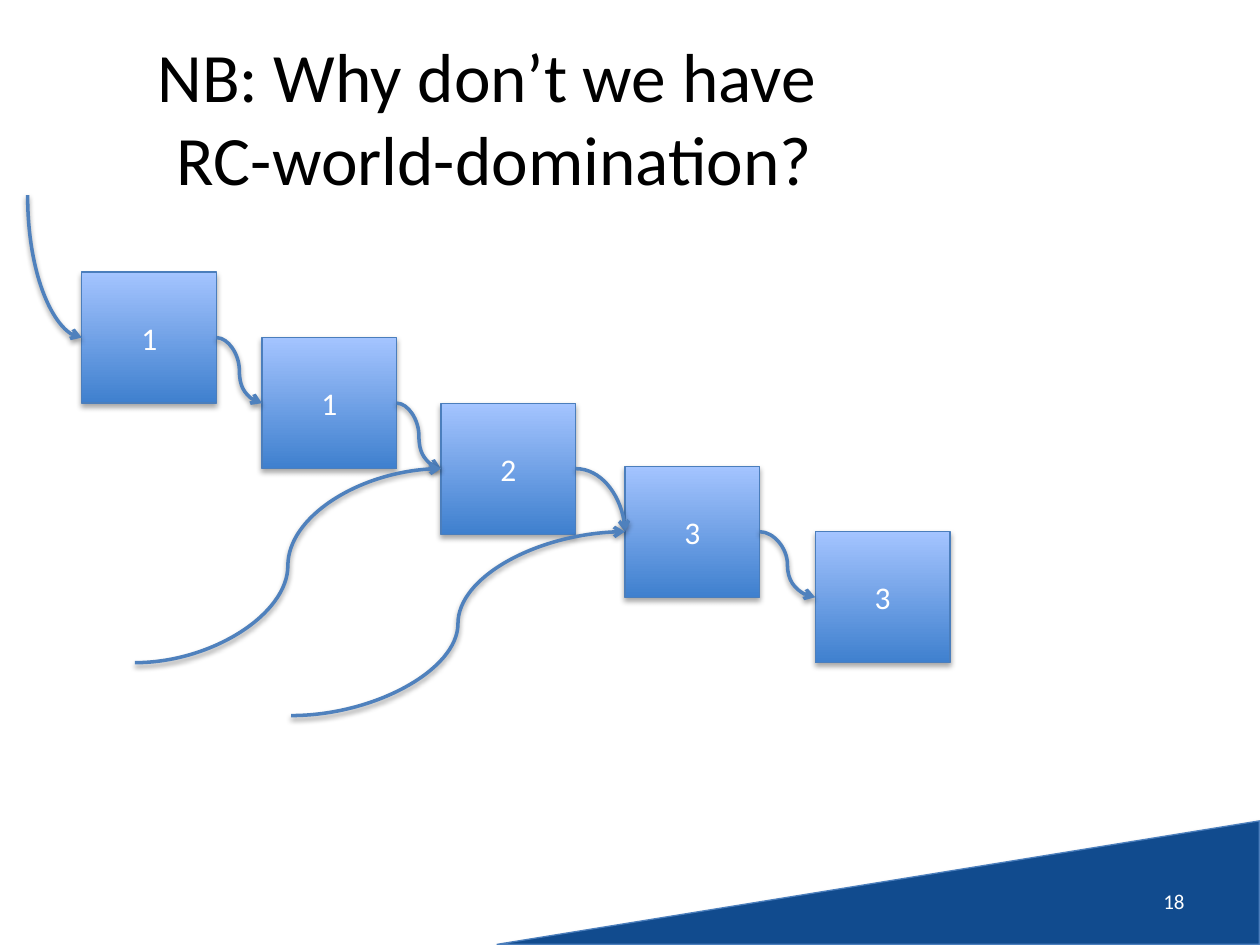
"""Build the slide on RC world domination: a chain of boxes joined by curved arrows."""
from typing import NamedTuple, Optional

from lxml.etree import SubElement
from pptx import Presentation
from pptx.dml.color import RGBColor
from pptx.enum.shapes import MSO_CONNECTOR, MSO_SHAPE
from pptx.enum.text import MSO_ANCHOR, MSO_AUTO_SIZE, PP_ALIGN
from pptx.oxml.ns import qn
from pptx.util import Emu, Pt

BLACK = RGBColor(0x00, 0x00, 0x00)
WHITE = RGBColor(0xFF, 0xFF, 0xFF)
NAVY = RGBColor(0x11, 0x4B, 0x8E)
EDGE = RGBColor(0x4B, 0x7E, 0xBC)
ARROW = RGBColor(0x4F, 0x81, 0xBD)
DEEP = RGBColor(0x3F, 0x80, 0xCE)
PALE = RGBColor(0xA4, 0xC4, 0xFF)
SCALE = 9144
WIDE, HIGH = 107, 104
LEFT, RIGHT = 1, 3


class Box(NamedTuple):
    label: str
    x: int
    y: int


class Link(NamedTuple):
    end: int
    start: Optional[int] = None
    x: int = 0
    y: int = 0
    bend: bool = False


BOXES = [
    Box("1", 65, 216),
    Box("1", 208, 268),
    Box("2", 350, 320),
    Box("3", 496, 370),
    Box("3", 647, 422),
]
LINKS = [
    Link(1, start=0),
    Link(2, start=1),
    Link(3, start=2, bend=True),
    Link(4, start=3),
    Link(3, x=231, y=568),
    Link(0, x=22, y=155, bend=True),
    Link(2, x=107, y=526),
]


def px(*nums: int) -> list[Emu]:
    return [Emu(num * SCALE) for num in nums]


def write(shape, text: str, *, size: float, color: RGBColor = WHITE,
          align: PP_ALIGN = PP_ALIGN.CENTER) -> None:
    frame = shape.text_frame
    frame.text = text
    frame.word_wrap = True
    frame.auto_size = MSO_AUTO_SIZE.NONE
    frame.vertical_anchor = MSO_ANCHOR.MIDDLE
    for para in frame.paragraphs:
        para.alignment = align
        for run in para.runs:
            run.font.name = "Calibri"
            run.font.size = Pt(size)
            run.font.color.rgb = color


def shade(shape, drop: int, alpha: int) -> None:
    props = shape._element.spPr
    list_ = props.find(qn("a:effectLst"))
    if list_ is None:
        list_ = SubElement(props, qn("a:effectLst"))
    cast = SubElement(list_, qn("a:outerShdw"), blurRad="40000", dist=str(drop),
                      dir="5400000", rotWithShape="0")
    tint = SubElement(cast, qn("a:srgbClr"), val=str(BLACK))
    SubElement(tint, qn("a:alpha"), val=str(alpha * 1000))


def add_form(slide, kind: MSO_SHAPE, x: int, y: int, wide: int, high: int):
    form = slide.shapes.add_shape(kind, *px(x, y, wide, high))
    form.shadow.inherit = False
    form.line.color.rgb = EDGE
    form.line.width = Pt(0.75)
    shade(form, 23000, 35)
    return form


def add_box(slide, box: Box):
    form = add_form(slide, MSO_SHAPE.RECTANGLE, box.x, box.y, WIDE, HIGH)
    form.fill.gradient()
    form.fill.gradient_angle = 90
    for stop, color in zip(form.fill.gradient_stops, (DEEP, PALE)):
        stop.color.rgb = color
    write(form, box.label, size=18)
    return form


def add_link(slide, link: Link, forms: list) -> None:
    goal = forms[link.end]
    back = link.bend and link.start is None
    curve = slide.shapes.add_connector(
        MSO_CONNECTOR.CURVE, *px(link.x, link.y, link.x, link.y))
    if back:
        curve.begin_connect(goal, LEFT)
        curve.end_x, curve.end_y = px(link.x, link.y)
    else:
        if link.start is not None:
            curve.begin_connect(forms[link.start], RIGHT)
        curve.end_connect(goal, LEFT)
    if link.bend:
        curve._element.spPr.find(qn("a:prstGeom")).set("prst", "curvedConnector2")
    curve.line.color.rgb = ARROW
    curve.line.width = Pt(2)
    tip = "a:headEnd" if back else "a:tailEnd"
    SubElement(curve.line._get_or_add_ln(), qn(tip), type="arrow")
    shade(curve, 20000, 38)


def main() -> None:
    deck = Presentation()
    deck.slide_width, deck.slide_height = px(1000, 750)
    slide = deck.slides.add_slide(deck.slide_layouts[5])

    wedge = add_form(slide, MSO_SHAPE.RIGHT_TRIANGLE, 648, 398, 98, 605)
    wedge.rotation = 270
    wedge.fill.solid()
    wedge.fill.fore_color.rgb = NAVY

    title = slide.shapes.title
    title.left, title.top, title.width, title.height = px(50, 30, 685, 125)
    write(title, "NB: Why don’t we have \vRC-world-domination?", size=39.6, color=BLACK)

    page = slide.shapes.add_textbox(*px(717, 695, 233, 40))
    write(page, "18", size=12, align=PP_ALIGN.RIGHT)

    forms = [add_box(slide, box) for box in BOXES]
    for link in LINKS:
        add_link(slide, link, forms)
    deck.save("out.pptx")


if __name__ == "__main__":
    main()
